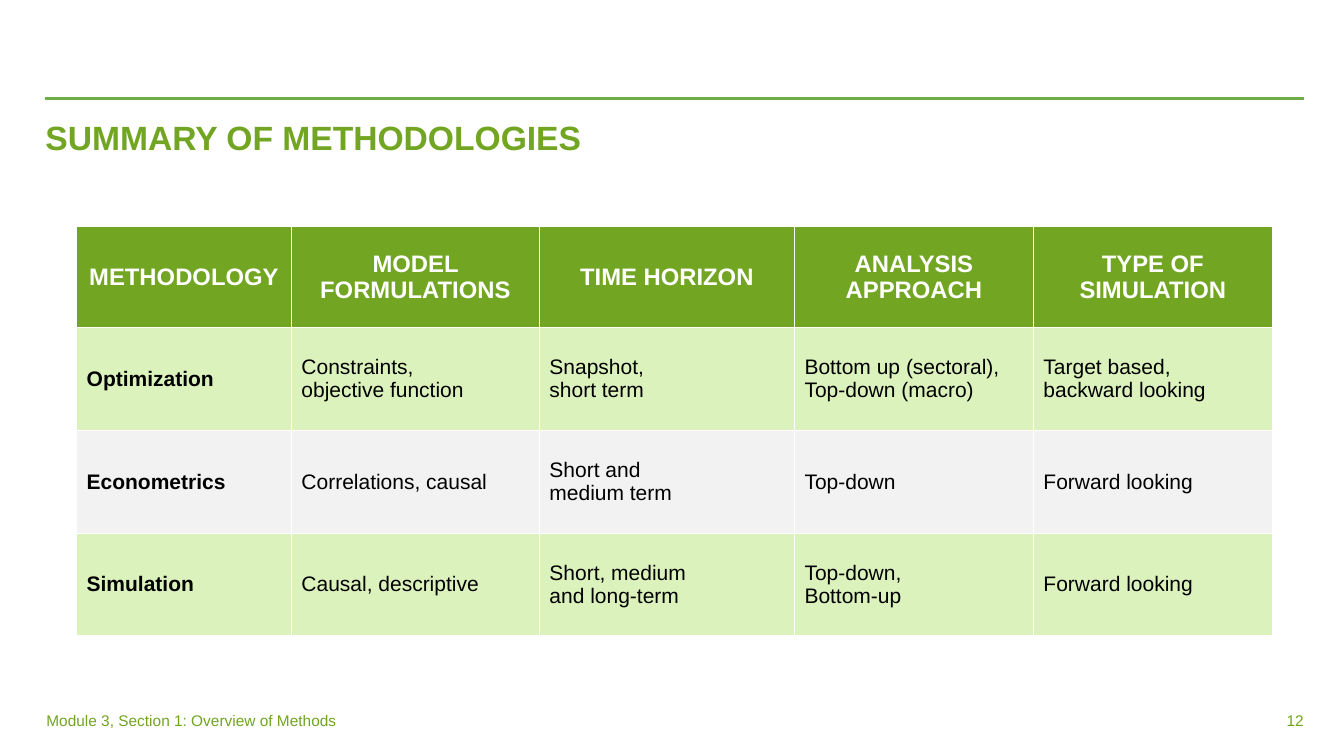
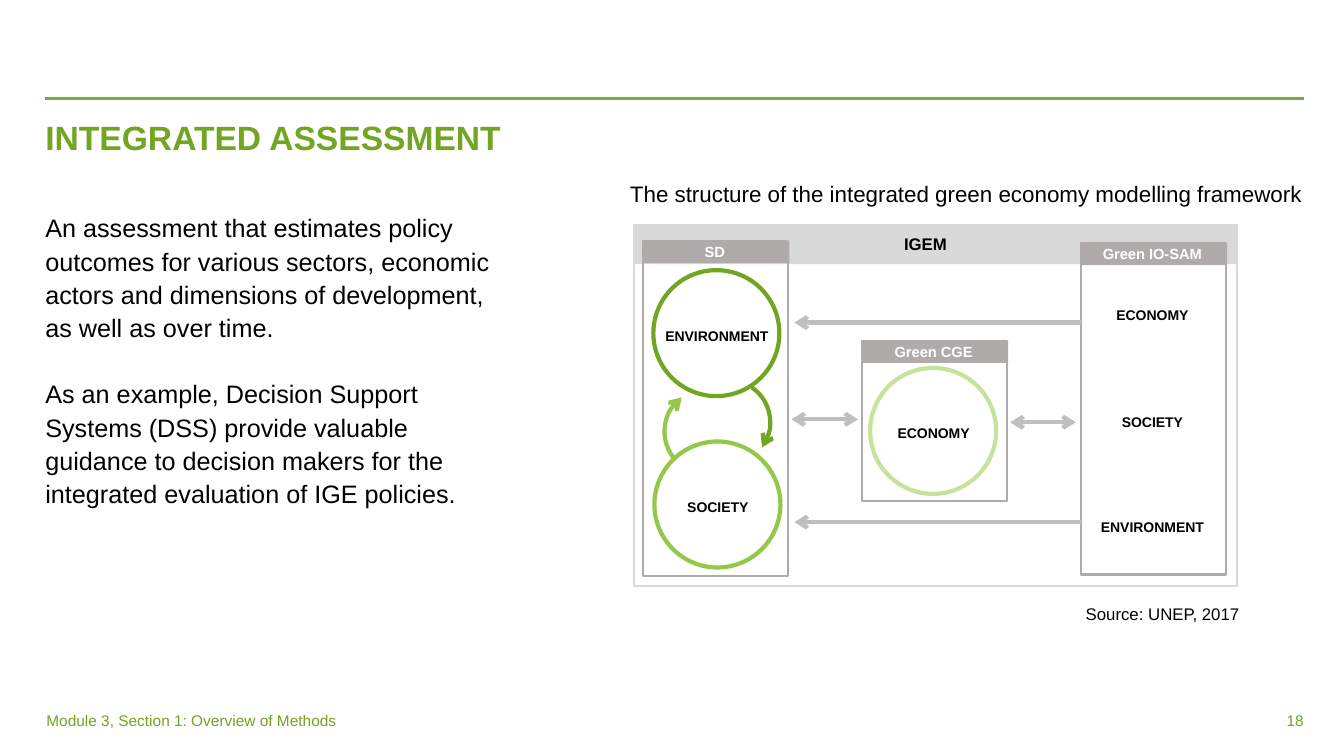
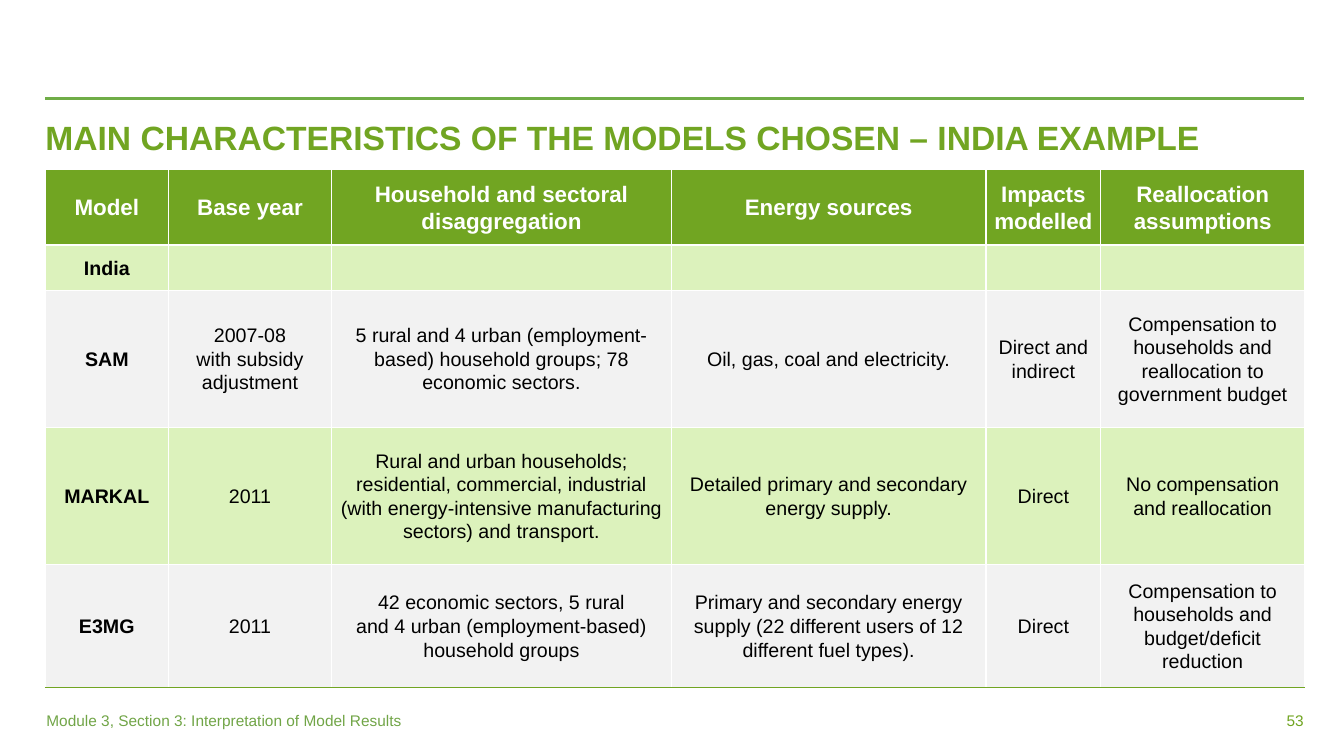
from copy import deepcopy

from lxml import etree
from pptx import Presentation
from pptx.dml.color import RGBColor
from pptx.enum import shapes as kinds, text as styles
from pptx.oxml.ns import qn
from pptx.util import Inches, Pt

rgb = RGBColor.from_string
GREEN, LIME, PALE = "71A522", "95C749", "C6E29D"
MINT, MIST, WHITE, BLACK = "DCF2BC", "F2F2F2", "FFFFFF", "000000"
GREY, SILVER, ASH = "AFABAB", "D9D9D9", "BFBFBF"
RECT, OVAL, ARC = (kinds.MSO_SHAPE.RECTANGLE, kinds.MSO_SHAPE.OVAL,
                   kinds.MSO_SHAPE.ARC)
FLUSH, ROOMY = (0, 0.05, 0, 0.05), (0.1, 0.05, 0.1, 0.05)


def write(box, text, size, color=BLACK, bold=False, align="LEFT",
          anchor="TOP", inset=FLUSH, space=1.0, gap=0):
    """Fill a text box or a table cell; \\n parts paragraphs, \\v lines."""
    frame = box.text_frame
    holder = box if hasattr(box, "margin_left") else frame
    if holder is frame:
        frame.word_wrap = True
    for side, width in zip(("left", "top", "right", "bottom"), inset):
        setattr(holder, "margin_" + side, Inches(width))
    holder.vertical_anchor = styles.MSO_ANCHOR[anchor]
    for i, part in enumerate(text.split("\n")):
        para = frame.add_paragraph() if i else frame.paragraphs[0]
        para.text = part
        para.alignment = styles.PP_ALIGN[align]
        para.line_spacing = space
        if i and gap:
            para.space_before = Pt(gap)
        for run in para.runs:
            form = {"name": "Arial", "size": Pt(size), "bold": bold}
            for name, value in form.items():
                setattr(run.font, name, value)
            run.font.color.rgb = rgb(color)
        for mark in para._p.findall(qn("a:br")):
            mark.append(deepcopy(para.runs[0]._r.rPr))


def draw(shape, fill=None, line=None, width=1.5, heads=()):
    """Set fill, line and arrowheads of a shape or connector."""
    if line:
        shape.line.color.rgb = rgb(line)
        shape.line.width = Pt(width)
        for head in heads:
            etree.SubElement(shape.line._get_or_add_ln(), qn("a:" + head),
                             type="arrow")
    else:
        shape.line.fill.background()
    if not hasattr(shape, "fill"):
        etree.SubElement(shape._element.spPr, qn("a:effectLst"))
        return
    shape.shadow.inherit = False
    if fill:
        shape.fill.solid()
        shape.fill.fore_color.rgb = rgb(fill)
    else:
        shape.fill.background()


deck = Presentation()
deck.slide_width, deck.slide_height = Inches(13.33), Inches(7.5)

# Shared parts: rule, title, footer, page number
methods = "Module 3, Section 1: Overview of Methods"
results = "Module 3, Section 3: Interpretation of Model Results"
heads = [
    ("SUMMARY OF METHODOLOGIES", methods, GREEN, "12"),
    ("INTEGRATED ASSESSMENT", methods, GREEN, "18"),
    ("MAIN CHARACTERISTICS OF THE MODELS CHOSEN – INDIA EXAMPLE",
     results, "71A547", "53"),
]
pages = []
for title, foot, tint, number in heads:
    page = deck.slides.add_slide(deck.slide_layouts[6]).shapes
    pages.append(page)
    rule = page.add_connector(kinds.MSO_CONNECTOR.STRAIGHT, *map(
        Inches, (0.45, 0.98, 12.93, 0.98)))
    draw(rule, line="70AD47", width=2)
    for spot, words, form in [
        ((0.45, 1.16, 12.48, 1.04), title,
         {"size": 24, "color": GREEN, "bold": True, "space": 0.9}),
        ((0.46, 6.95, 4.01, 0.4), foot,
         {"size": 11, "color": tint, "anchor": "MIDDLE"}),
        ((11.82, 6.95, 1.11, 0.4), number,
         {"size": 11, "color": GREEN, "anchor": "MIDDLE", "align": "RIGHT"}),
    ]:
        write(page.add_textbox(*map(Inches, spot)), words, **form)

# Tables on the first and last slides
summary = [
    ["METHODOLOGY", "MODEL FORMULATIONS", "TIME HORIZON",
     "ANALYSIS APPROACH", "TYPE OF SIMULATION"],
    ["Optimization", "Constraints,\vobjective function",
     "Snapshot,\nshort term", "Bottom up (sectoral), Top-down (macro)",
     "Target based, backward looking"],
    ["Econometrics", "Correlations, causal", "Short and\vmedium term",
     "Top-down", "Forward looking"],
    ["Simulation", "Causal, descriptive", "Short, medium\vand long-term",
     "Top-down,\vBottom-up", "Forward looking"],
]
models = [
    ["Model", "Base year", "Household and sectoral disaggregation",
     "Energy sources", "Impacts modelled", "Reallocation assumptions"],
    ["India", "", "", "", "", ""],
    ["SAM", "2007-08\vwith subsidy adjustment",
     "5 rural and 4 urban (employment-based) household groups; "
     "78 economic sectors.",
     "Oil, gas, coal and electricity.", "Direct and indirect",
     "Compensation to households and reallocation to government budget"],
    ["MARKAL", "2011",
     "Rural and urban households; residential, commercial, industrial "
     "(with energy-intensive manufacturing sectors) and transport.",
     "Detailed primary and secondary energy supply.", "Direct",
     "No compensation\vand reallocation"],
    ["E3MG", "2011",
     "42 economic sectors, 5 rural\vand 4 urban (employment-based) "
     "household groups",
     "Primary and secondary energy supply (22 different users of 12 "
     "different fuel types).", "Direct",
     "Compensation to households and budget/deficit reduction"],
]
tables = [
    (pages[0], summary, (0.76, 2.25), [2.13, 2.46, 2.53, 2.37, 2.37],
     [1, 1.02, 1.02, 1.02], (17, 15), "LEFT", WHITE,
     {"inset": ROOMY}),
    (pages[2], models, (0.45, 1.68), [1.22, 1.62, 3.37, 3.12, 1.14, 2.02],
     [0.75, 0.45, 1.36, 1.36, 1.22], (16, 14), "CENTER", GREEN,
     {"inset": (0.06, 0, 0.06, 0), "space": 1.07}),
]
for page, data, spot, wides, highs, sizes, align, base, form in tables:
    area = (*spot, sum(wides), sum(highs))
    grid = page.add_table(len(highs), len(wides), *map(Inches, area)).table
    for col, wide in zip(grid.columns, wides):
        col.width = Inches(wide)
    for r, (row, high) in enumerate(zip(data, highs)):
        grid.rows[r].height = Inches(high)
        for c, words in enumerate(row):
            cell = grid.cell(r, c)
            write(cell, words, sizes[r > 0], BLACK if r else WHITE,
                  r == 0 or c == 0, align if r else "CENTER", "MIDDLE",
                  **form)
            for side in "LRTB":
                edge = etree.SubElement(cell._tc.get_or_add_tcPr(),
                                        qn("a:ln" + side), w=str(Pt(1)))
                ink = etree.SubElement(edge, qn("a:solidFill"))
                last = side == "B" and r == len(highs) - 1
                etree.SubElement(ink, qn("a:srgbClr"),
                                 val=base if last else WHITE)
            cell.fill.solid()
            cell.fill.fore_color.rgb = rgb(
                (MINT if r % 2 else MIST) if r else GREEN)

# Integrated assessment: running text, caption, source
page = pages[1]
body = ("An assessment that estimates policy\voutcomes for various sectors, "
        "economic\vactors and dimensions of development,\v"
        "as well as over time.\n"
        "As an example, Decision Support\vSystems (DSS) provide valuable\v"
        "guidance to decision makers for the\v"
        "integrated evaluation of IGE policies.")
caption = "The structure of the integrated green economy modelling framework"
for spot, words, form in [
    ((0.45, 2.03, 5.24, 3.33), body, {"size": 18, "space": 1.1, "gap": 23.7}),
    ((6.15, 1.74, 7, 0.37), caption, {"size": 16, "inset": ROOMY}),
    ((10.67, 5.94, 1.74, 0.3), "Source: UNEP, 2017",
     {"size": 12, "inset": ROOMY}),
]:
    write(page.add_textbox(*map(Inches, spot)), words, **form)

# Diagram frame
draw(page.add_shape(RECT, *map(Inches, (6.29, 2.23, 5.98, 3.58))),
     line=SILVER)
draw(page.add_shape(RECT, *map(Inches, (6.28, 2.23, 6, 0.39))), SILVER)
labels = [(8.61, 2.25, "IGEM", 12, BLACK)]

# Model boxes with name bands
for x, y, high, name in [(6.38, 2.39, 3.32, "SD"),
                         (10.72, 2.41, 3.29, "Green IO-SAM"),
                         (8.55, 3.38, 1.59, "Green CGE")]:
    draw(page.add_shape(RECT, *map(Inches, (x, y, 1.44, high))), line=GREY)
    draw(page.add_shape(RECT, *map(Inches, (x, y, 1.45, 0.22))), GREY)
    labels.append((x + 0.14, y - 0.06, name, 10.5, WHITE))

# Circles
for x, y, name, tint in [(6.48, 2.68, "ENVIRONMENT", GREEN),
                         (6.49, 4.38, "SOCIETY", LIME),
                         (8.63, 3.65, "ECONOMY", PALE)]:
    ring = page.add_shape(OVAL, *map(Inches, (x, y, 1.25, 1.25)))
    draw(ring, line=tint, width=3)
    labels.append((x + 0.06, y + 0.48, name, 10, BLACK))

# Parts of the Green IO-SAM box
for y, name in [(2.96, "ECONOMY"), (4.02, "SOCIETY"), (5.06, "ENVIRONMENT")]:
    labels.append((10.86, y, name, 10, BLACK))

# Straight arrows
both, one = ("headEnd", "tailEnd"), ("tailEnd",)
for start, end, y, tips in [(10.02, 10.67, 4.19, both),
                            (7.85, 8.51, 4.16, both),
                            (10.72, 7.88, 3.2, one),
                            (10.72, 7.88, 5.18, one)]:
    arrow = page.add_connector(kinds.MSO_CONNECTOR.STRAIGHT,
                               *map(Inches, (start, y, end, y)))
    draw(arrow, line=ASH, width=3, heads=tips)

# Curved arrows between environment and society
for x, y, turn, tint in [(6.8, 3.77, 0, GREEN), (6.59, 3.86, 197.3, LIME)]:
    bend = page.add_shape(ARC, *map(Inches, (x, y, 0.84, 0.84)))
    bend.adjustments[0], bend.adjustments[1] = 182.67, 21.74
    bend.rotation = turn
    draw(bend, line=tint, width=3, heads=one)

# Diagram labels
for x, y, name, size, tint in labels:
    write(page.add_textbox(*map(Inches, (x, y, 1.14, 0.32))), name, size,
          tint, True, "CENTER", "MIDDLE", space=1.1)

deck.save("out.pptx")
